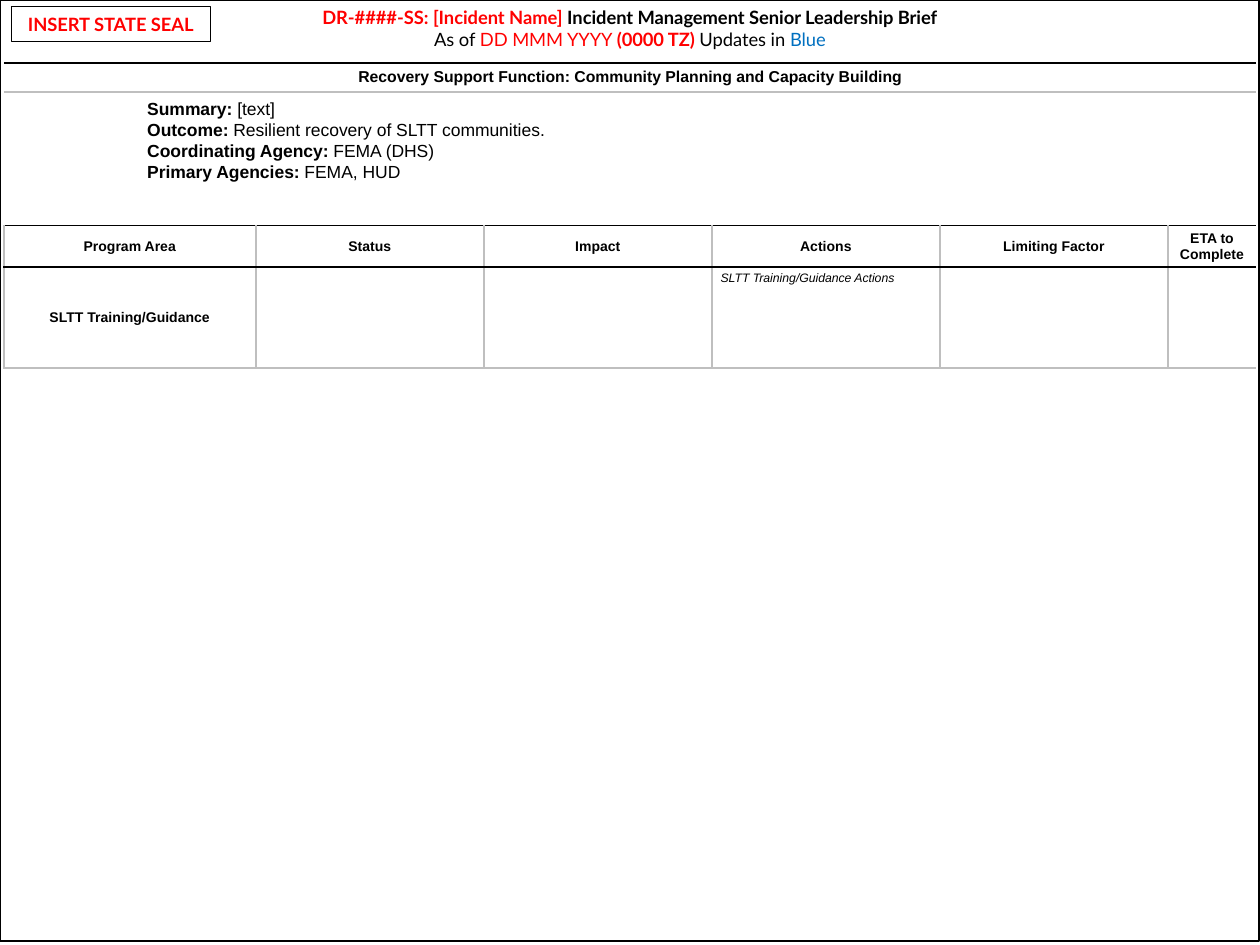
from lxml.etree import SubElement
from pptx import Presentation
from pptx.dml.color import RGBColor
from pptx.enum.shapes import MSO_SHAPE
from pptx.enum.text import MSO_ANCHOR, PP_ALIGN
from pptx.oxml.ns import qn
from pptx.util import Inches, Pt

BLACK = RGBColor(0x00, 0x00, 0x00)
RED = RGBColor(0xFF, 0x00, 0x00)
BLUE = RGBColor(0x00, 0x70, 0xC0)
GRAY = RGBColor(0xBF, 0xBF, 0xBF)

BRIEF_TITLE = [
    [("DR-####-SS: [Incident Name] ", {"color": RED, "bold": True}),
     ("Incident Management Senior Leadership Brief", {"bold": True})],
    [("As of ", {}), ("DD MMM YYYY ", {"color": RED}),
     ("(0000 TZ) ", {"color": RED, "bold": True}),
     ("Updates in ", {}), ("Blue", {"color": BLUE})],
]
SUMMARY = [
    ("Summary: ", "[text]"),
    ("Outcome: ", "Resilient recovery of SLTT communities."),
    ("Coordinating Agency: ", "FEMA (DHS)"),
    ("Primary Agencies: ", "FEMA, HUD"),
]
PROGRAM_HEADINGS = ["Program Area", "Status", "Impact", "Actions",
                    "Limiting Factor", "ETA to Complete"]
PROGRAM_WIDTHS = [2, 1.81, 1.81, 1.81, 1.81, 0.7]


def add_text(paragraph, text, *, size, font="Arial", color=BLACK, bold=False,
             italic=False, align=PP_ALIGN.LEFT):
    paragraph.alignment = align
    run = paragraph.add_run()
    run.text = text
    run.font.name = font
    run.font.size = Pt(size)
    run.font.color.rgb = color
    run.font.bold = bold
    run.font.italic = italic


def add_paragraphs(frame, paragraphs, **common):
    """Write one paragraph per list of (text, format) runs."""
    frame.word_wrap = True
    for index, runs in enumerate(paragraphs):
        paragraph = frame.add_paragraph() if index else frame.paragraphs[0]
        for text, run_format in runs:
            add_text(paragraph, text, **common, **run_format)


def add_outline(slide, box, width):
    shape = slide.shapes.add_shape(MSO_SHAPE.RECTANGLE, *map(Inches, box))
    shape.shadow.inherit = False
    shape.fill.background()
    shape.line.color.rgb = BLACK
    shape.line.width = Pt(width)
    return shape


def add_title(slide, box):
    frame = slide.shapes.add_textbox(*map(Inches, box)).text_frame
    add_paragraphs(frame, BRIEF_TITLE, size=10.5, font="Lato",
                   align=PP_ALIGN.CENTER)


def add_seal_box(slide, box):
    frame = add_outline(slide, box, 0.75).text_frame
    frame.vertical_anchor = MSO_ANCHOR.MIDDLE
    add_paragraphs(frame, [[("INSERT STATE SEAL", {})]], size=10.5, font="Lato",
                   color=RED, bold=True, align=PP_ALIGN.CENTER)


def add_summary(slide, box):
    frame = slide.shapes.add_textbox(*map(Inches, box)).text_frame
    lines = [[(label, {"bold": True}), (value, {})] for label, value in SUMMARY]
    add_paragraphs(frame, lines, size=10)


def set_borders(cell, **colors):
    """Draw 1 pt borders on the named sides and hide the others."""
    properties = cell._tc.get_or_add_tcPr()
    sides = {"left": "a:lnL", "right": "a:lnR", "top": "a:lnT", "bottom": "a:lnB"}
    for side, tag in sides.items():
        line = SubElement(properties, qn(tag), w=str(Pt(1)))
        if side in colors:
            fill = SubElement(line, qn("a:solidFill"))
            SubElement(fill, qn("a:srgbClr"), val=str(colors[side]))
        else:
            SubElement(line, qn("a:noFill"))


def format_cell(cell, anchor=MSO_ANCHOR.MIDDLE, **borders):
    cell.vertical_anchor = anchor
    cell.margin_left = cell.margin_right = Inches(0.07)
    cell.margin_top = cell.margin_bottom = Inches(0.03)
    set_borders(cell, **borders)
    cell.fill.background()


def add_plain_table(slide, box, widths, heights):
    frame = slide.shapes.add_table(len(heights), len(widths), *map(Inches, box))
    table = frame.table
    table.first_row = table.horz_banding = False
    for column, width in zip(table.columns, widths):
        column.width = Inches(width)
    for row, height in zip(table.rows, heights):
        row.height = Inches(height)
    return table


def add_function_heading(slide, box):
    cell = add_plain_table(slide, box, [box[2]], [box[3]]).cell(0, 0)
    format_cell(cell, top=BLACK, bottom=GRAY)
    add_text(cell.text_frame.paragraphs[0],
             "Recovery Support Function: Community Planning and Capacity Building",
             size=9, bold=True, align=PP_ALIGN.CENTER)


def add_program_table(slide, box):
    table = add_plain_table(slide, box, PROGRAM_WIDTHS, [0.33, 0.8])
    last = len(PROGRAM_HEADINGS) - 1
    for column, heading in enumerate(PROGRAM_HEADINGS):
        sides = {"left": GRAY} if column == last else {"left": GRAY, "right": GRAY}
        header, body = table.cell(0, column), table.cell(1, column)
        format_cell(header, top=BLACK, bottom=BLACK, **sides)
        add_text(header.text_frame.paragraphs[0], heading, size=8, bold=True,
                 align=PP_ALIGN.CENTER)
        anchor = MSO_ANCHOR.TOP if column else MSO_ANCHOR.MIDDLE
        format_cell(body, anchor, top=BLACK, bottom=GRAY, **sides)
    add_text(table.cell(1, 0).text_frame.paragraphs[0], "SLTT Training/Guidance",
             size=8, bold=True, align=PP_ALIGN.CENTER)
    actions = table.cell(1, PROGRAM_HEADINGS.index("Actions"))
    add_text(actions.text_frame.paragraphs[0], "SLTT Training/Guidance Actions",
             size=7, italic=True)


def main():
    presentation = Presentation()
    presentation.slide_width = Inches(10)
    presentation.slide_height = Inches(7.5)
    slide = presentation.slides.add_slide(presentation.slide_layouts[6])
    add_title(slide, (0, 0, 10, 0.45))
    add_seal_box(slide, (0.09, 0.05, 1.58, 0.28))
    add_outline(slide, (0, 0, 9.99, 7.47), 1)
    add_function_heading(slide, (0.03, 0.5, 9.94, 0.23))
    add_summary(slide, (1.07, 0.73, 8.45, 0.77))
    add_program_table(slide, (0.03, 1.79, 9.94, 1.13))
    presentation.save("out.pptx")


if __name__ == "__main__":
    main()
